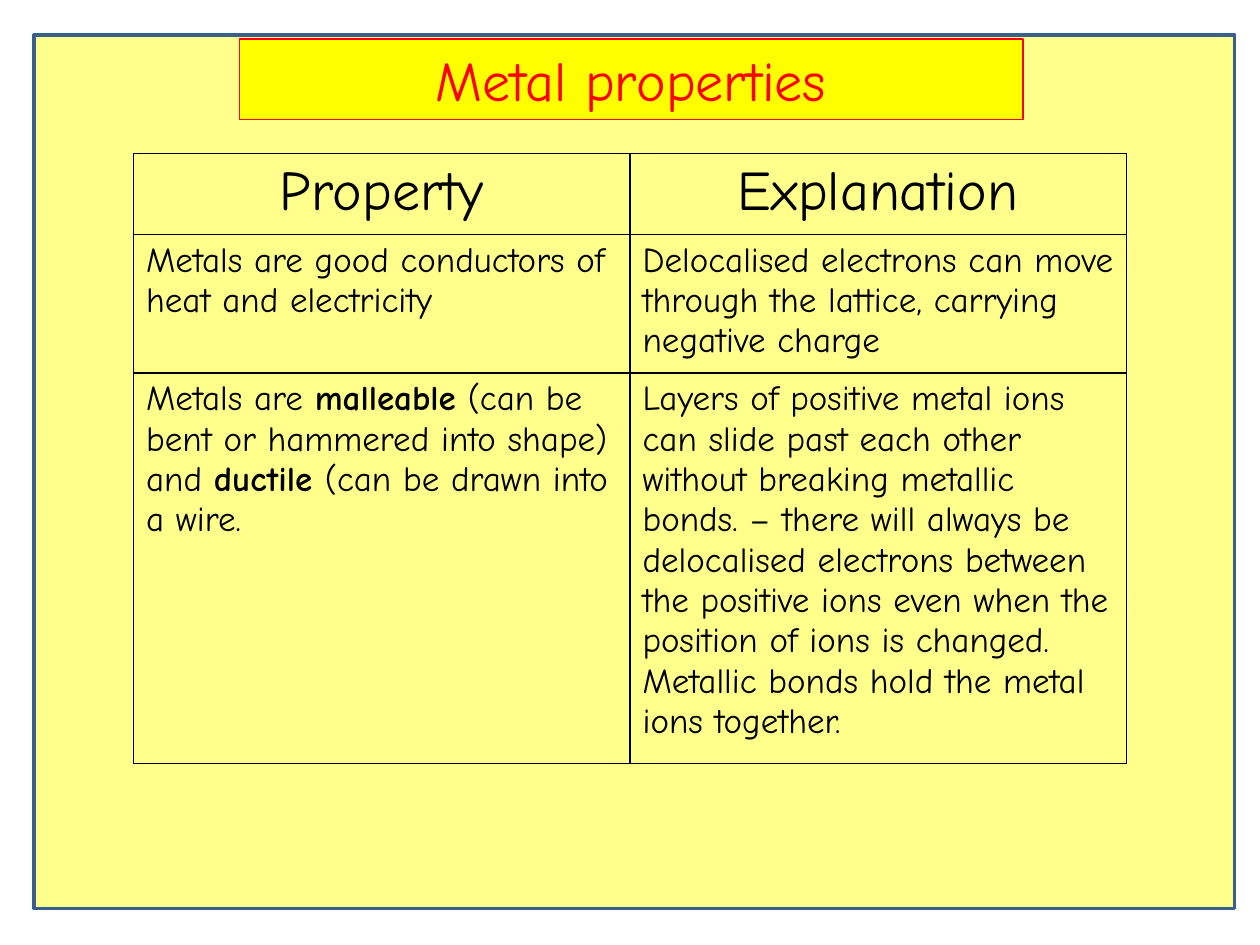
from lxml import etree
from pptx import Presentation
from pptx.dml.color import RGBColor
from pptx.enum import shapes, text
from pptx.oxml.ns import qn
from pptx.util import Inches, Pt

TITLE = "Metal properties"
HEADINGS = ["Property", "Explanation"]
# Each cell is a list of (words, bold) runs
PROPERTIES = [
    [[("Metals are good conductors of heat and electricity", False)],
     [("Delocalised electrons can move through the lattice, "
       "carrying negative charge", False)]],
    [[("Metals are ", False), ("malleable", True),
      (" (can be bent or hammered into shape) and ", False),
      ("ductile ", True), ("(can be drawn into a wire.", False)],
     [("Layers of positive metal ions can slide past each other without "
       "breaking metallic bonds. – there will always be delocalised electrons "
       "between the positive ions even when the position of ions is changed. "
       "Metallic bonds hold the metal ions together.", False)]],
]
COLORS = {"panel": "FFFF8B", "frame": "3A5F8C", "banner": "FFFF00",
          "title": "FF0000", "ink": "000000"}
FONT = "Comic Neue"
ROW_HEIGHTS = [0.64, 1.1, 3.1]
COLUMN_WIDTH = 3.94


def color(name):
    return RGBColor.from_string(COLORS[name])


def add_box(slide, left, top, width, height, fill, line, line_width):
    box = slide.shapes.add_shape(
        shapes.MSO_SHAPE.RECTANGLE,
        Inches(left), Inches(top), Inches(width), Inches(height))
    box.shadow.inherit = False
    box.fill.solid()
    box.fill.fore_color.rgb = color(fill)
    box.line.color.rgb = color(line)
    box.line.width = Pt(line_width)
    return box


def write(paragraph, runs, size, ink="ink", centred=False):
    paragraph.alignment = text.PP_ALIGN.CENTER if centred else text.PP_ALIGN.LEFT
    for words, bold in runs:
        run = paragraph.add_run()
        run.text = words
        run.font.name = FONT
        run.font.size = Pt(size)
        run.font.bold = bold
        run.font.color.rgb = color(ink)


def add_borders(cell):
    properties = cell._tc.get_or_add_tcPr()
    for position, side in enumerate(("a:lnL", "a:lnR", "a:lnT", "a:lnB")):
        border = etree.Element(qn(side), w=str(Pt(1)))
        fill = etree.SubElement(border, qn("a:solidFill"))
        etree.SubElement(fill, qn("a:srgbClr"), val=COLORS["ink"])
        properties.insert(position, border)


def main():
    prs = Presentation()
    prs.slide_width, prs.slide_height = Inches(10), Inches(7.5)
    slide = prs.slides.add_slide(prs.slide_layouts[6])

    # Background panel and title banner
    add_box(slide, 0.27, 0.28, 9.53, 6.93, "panel", "frame", 2)
    banner = add_box(slide, 1.9, 0.31, 6.22, 0.64, "banner", "title", 0.75)
    banner.text_frame.word_wrap = True
    banner.text_frame.vertical_anchor = text.MSO_ANCHOR.TOP
    write(banner.text_frame.paragraphs[0], [(TITLE, False)], 32, "title", True)

    # Table of properties
    rows = [[[(heading, False)] for heading in HEADINGS]] + PROPERTIES
    table = slide.shapes.add_table(
        len(rows), len(HEADINGS), Inches(1.06), Inches(1.22),
        Inches(COLUMN_WIDTH * len(HEADINGS)), Inches(sum(ROW_HEIGHTS))).table
    table.first_row = table.horz_banding = False
    for column in table.columns:
        column.width = Inches(COLUMN_WIDTH)
    for r, (cells, height) in enumerate(zip(rows, ROW_HEIGHTS)):
        table.rows[r].height = Inches(height)
        is_heading = r == 0
        for c, runs in enumerate(cells):
            cell = table.cell(r, c)
            cell.fill.background()
            add_borders(cell)
            write(cell.text_frame.paragraphs[0], runs,
                  32 if is_heading else 20, centred=is_heading)

    prs.save("out.pptx")


if __name__ == "__main__":
    main()
